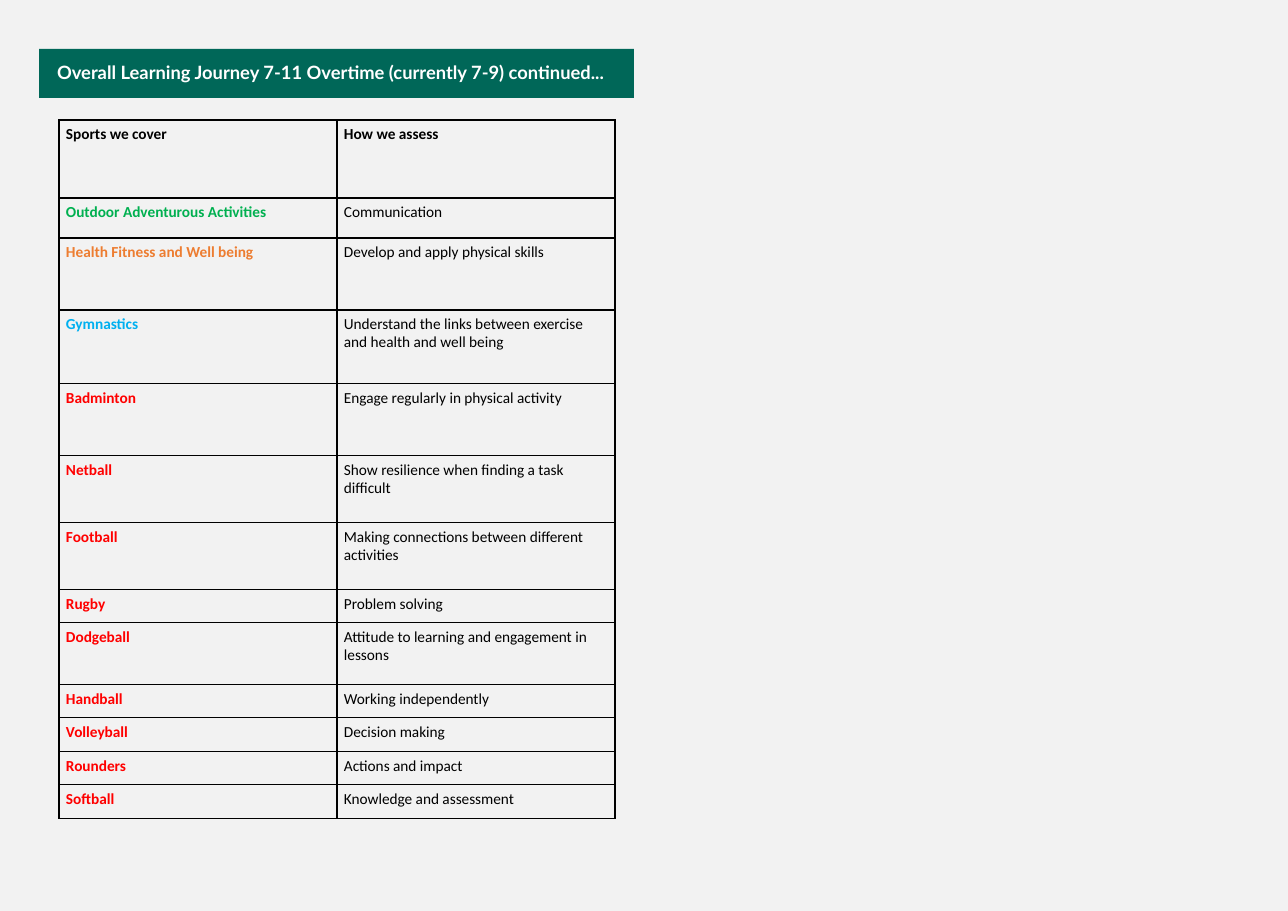
from dataclasses import dataclass

from lxml.etree import SubElement
from pptx import Presentation
from pptx.dml.color import RGBColor as Rgb
from pptx.enum.shapes import MSO_SHAPE as Shape
from pptx.enum.text import MSO_ANCHOR as Anchor, PP_ALIGN as Align
from pptx.oxml.ns import qn
from pptx.util import Pt

SCALE = 8298  # EMU in one px


def px(n):
    return n * SCALE


@dataclass(frozen=True)
class Theme:
    back: str = "F2F2F2"
    band: str = "006758"
    white: str = "FFFFFF"
    ink: str = "000000"
    green: str = "00B050"
    orange: str = "ED7D31"
    blue: str = "00B0F0"
    red: str = "FF0000"
    head: str = "Lato"
    body: str = "Calibri"
    large: int = 12
    small: int = 10
    rule: float = 0.86


class Page:
    def __init__(self, deck, theme):
        self.theme = theme
        self.slide = deck.slides.add_slide(deck.slide_layouts[6])
        self.paint(self.slide.background.fill, theme.back)

    def paint(self, fill, color):
        fill.solid()
        fill.fore_color.rgb = Rgb.from_string(color)

    def label(self, para, text, color, bold, size, face):
        run = para.add_run()
        run.text = text
        font = run.font
        font.name, font.size, font.bold = face, Pt(size), bold
        font.color.rgb = Rgb.from_string(color)

    def inset(self, box, left, top, right, bottom):
        box.margin_left, box.margin_top = px(left), px(top)
        box.margin_right, box.margin_bottom = px(right), px(bottom)

    def title(self, text, *place):
        look = self.theme
        bar = self.slide.shapes.add_shape(Shape.RECTANGLE, *map(px, place))
        bar.shadow.inherit = False
        self.paint(bar.fill, look.band)
        bar.line.fill.background()
        frame = bar.text_frame
        frame.word_wrap = True
        frame.vertical_anchor = Anchor.MIDDLE
        self.inset(frame, 18, 6, 11, 6)
        para = frame.paragraphs[0]
        para.alignment = Align.LEFT
        para.line_spacing = 0.9
        self.label(para, text, look.white, True, look.large, look.head)

    def edge(self, cell):
        """Rule all four sides of a cell."""
        props = cell._tc.get_or_add_tcPr()
        for spot, side in enumerate(("lnL", "lnR", "lnT", "lnB")):
            line = props.makeelement(qn(f"a:{side}"), w=str(Pt(self.theme.rule)))
            fill = SubElement(line, qn("a:solidFill"))
            SubElement(fill, qn("a:srgbClr"), val=self.theme.ink)
            props.insert(spot, line)

    def cell(self, cell, text, color, bold):
        self.inset(cell, 7, 5, 7, 5)
        cell.fill.background()
        self.edge(cell)
        para = cell.text_frame.paragraphs[0]
        self.label(para, text, color, bold, self.theme.small, self.theme.body)

    def table(self, rows, left, top, width):
        """Draw rows of (height, sport, color, skill) under a bold head."""
        high = sum(row[0] for row in rows)
        place = map(px, (left, top, width, high))
        grid = self.slide.shapes.add_table(len(rows), 2, *place).table
        grid.first_row = grid.horz_banding = False
        for col in grid.columns:
            col.width = px(width // 2)
        for i, (tall, sport, color, skill) in enumerate(rows):
            grid.rows[i].height = px(tall)
            self.cell(grid.cell(i, 0), sport, color, True)
            self.cell(grid.cell(i, 1), skill, self.theme.ink, i == 0)


def main():
    deck = Presentation()
    deck.slide_width, deck.slide_height = px(1288), px(911)
    look = Theme()
    page = Page(deck, look)
    page.title("Overall Learning Journey 7-11 Overtime (currently 7-9) continued...",
               39, 49, 595, 49)
    page.table([
        (78, "Sports we cover", look.ink, "How we assess"),
        (40, "Outdoor Adventurous Activities", look.green, "Communication"),
        (72, "Health Fitness and Well being", look.orange,
         "Develop and apply physical skills"),
        (74, "Gymnastics", look.blue,
         "Understand the links between exercise and health and well being"),
        (72, "Badminton", look.red, "Engage regularly in physical activity"),
        (67, "Netball", look.red, "Show resilience when finding a task difficult"),
        (67, "Football", look.red, "Making connections between different activities"),
        (33, "Rugby", look.red, "Problem solving"),
        (62, "Dodgeball", look.red, "Attitude to learning and engagement in lessons"),
        (33, "Handball", look.red, "Working independently"),
        (34, "Volleyball", look.red, "Decision making"),
        (33, "Rounders", look.red, "Actions and impact"),
        (34, "Softball", look.red, "Knowledge and assessment"),
    ], 59, 120, 556)
    deck.save("out.pptx")


if __name__ == "__main__":
    main()
